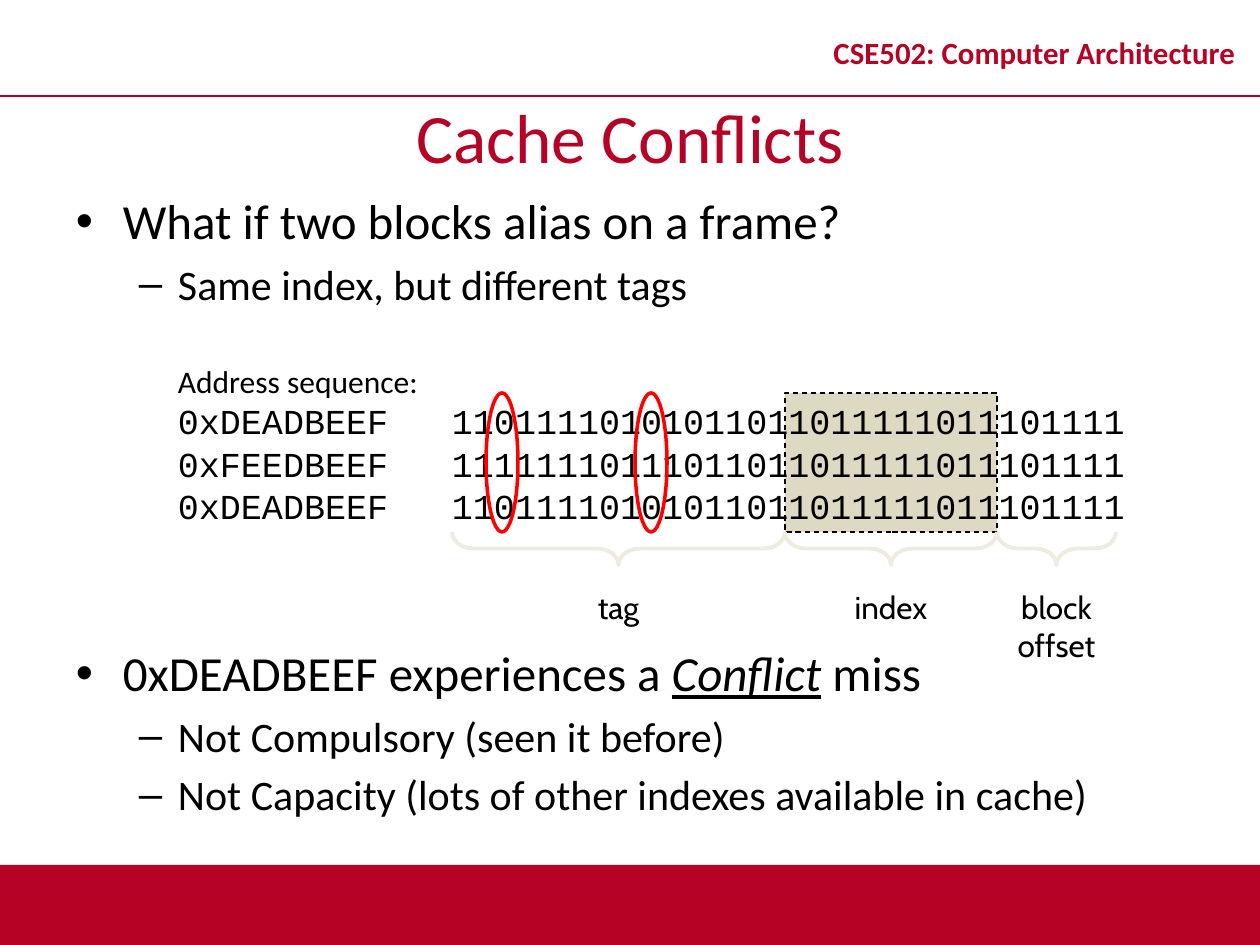
from lxml import etree
from pptx import Presentation
from pptx.dml.color import RGBColor
from pptx.enum import dml, shapes, text
from pptx.oxml.ns import qn
from pptx.util import Emu, Pt

PX = 914400 // 126
THEME = {
    "red": "B60225", "ink": "000000", "sand": "DDD9C3", "pale": "EEECE1",
    "ring": "FF0000", "sans": "Calibri", "mono": "Courier New", "tag": "Cabin",
    "title": 39.6, "main": 28, "sub": 24, "code": 20, "note": 18, "head": 17.6,
}
FORM = shapes.MSO_SHAPE
MID = text.MSO_ANCHOR.MIDDLE
LEFT, MIDDLE = text.PP_ALIGN.LEFT, text.PP_ALIGN.CENTER

deck = Presentation()
deck.slide_width, deck.slide_height = Emu(1260 * PX), Emu(945 * PX)
slide = deck.slides.add_slide(deck.slide_layouts[6])


def shape(form, box, fill=None, line=None, width=1):
    item = slide.shapes.add_shape(form, *[Emu(int(n * PX)) for n in box])
    item.shadow.inherit = False
    if fill:
        item.fill.solid()
        item.fill.fore_color.rgb = RGBColor.from_string(THEME[fill])
    else:
        item.fill.background()
    if line:
        item.line.color.rgb = RGBColor.from_string(THEME[line])
        item.line.width = Pt(width)
    else:
        item.line.fill.background()
    return item


def write(box, rows, size="sub", face="sans", color="ink", align=LEFT, anchor=None, **more):
    """Each row is a string, or (level, runs) for a bullet; a run is (words, format)."""
    frame = slide.shapes.add_textbox(*[Emu(int(n * PX)) for n in box]).text_frame
    frame.word_wrap = True
    frame.margin_left = frame.margin_right = frame.margin_top = frame.margin_bottom = 0
    if anchor:
        frame.vertical_anchor = anchor
    for i, row in enumerate(rows):
        para = frame.paragraphs[0] if i == 0 else frame.add_paragraph()
        para.alignment = align
        level, runs = (None, [(row, {})]) if isinstance(row, str) else row
        kind = size
        if level is not None:
            kind, mark, edge, hang = [("main", "•", 47, 47), ("sub", "–", 102, 39)][level]
            para.level = level
            prop = para._p.get_or_add_pPr()
            prop.set("marL", str(edge * PX))
            prop.set("indent", str(-hang * PX))
            if i:
                para.space_before = Pt(THEME[kind] * 0.2)
            etree.SubElement(prop, qn("a:buFont")).set("typeface", "Arial")
            etree.SubElement(prop, qn("a:buChar")).set("char", mark)
        if "space" in more:
            para.line_spacing = more["space"]
        for words, extra in runs:
            run = para.add_run()
            run.text = words
            look = {"size": Pt(THEME[kind]), "name": THEME[face],
                    "bold": more.get("bold", False), **extra}
            for key, value in look.items():
                setattr(run.font, key, value)
            run.font.color.rgb = RGBColor.from_string(THEME[color])


# Footer band, header rule and course name
shape(FORM.RECTANGLE, (0, 865, 1260, 80), "red")
rule = slide.shapes.add_connector(shapes.MSO_CONNECTOR.STRAIGHT, 0, 96 * PX, 1260 * PX, 96 * PX)
rule.line.color.rgb = RGBColor.from_string(THEME["red"])
rule.line.width = Pt(1)
etree.SubElement(rule._element.spPr, qn("a:effectLst"))
write((809, 16, 451, 79), ["CSE502: Computer Architecture"], "head", color="red",
      align=MIDDLE, anchor=MID, bold=True, space=0.8)

# Title
write((0, 96, 1260, 79), ["Cache Conflicts"], "title", color="red", align=MIDDLE, anchor=MID)

# Shaded index bits, behind the addresses
top, tall = 393, 139
shade = shape(FORM.RECTANGLE, (785, top, 212, tall), "sand", "ink", 0.75)
shade.line.dash_style = dml.MSO_LINE.DASH

# Bullets above and below the addresses
write((76, 191, 1108, 125), [
    (0, [("What if two blocks alias on a frame?", {})]),
    (1, [("Same index, but different tags", {})]),
])
write((76, 643, 1108, 190), [
    (0, [("0xDEADBEEF experiences a ", {}),
         ("Conflict", {"italic": True, "underline": True}), (" miss", {})]),
    (1, [("Not Compulsory (seen it before)", {})]),
    (1, [("Not Capacity (lots of other indexes available in cache)", {})]),
])

# Address sequence: hex column and bit column
dead = ("0xDEADBEEF", "11011110101011011011111011101111")
feed = ("0xFEEDBEEF", "11111110111011011011111011101111")
write((178, 362, 300, 38), ["Address sequence:"], "note")
for left, wide, col in zip((178, 452), (250, 720), zip(dead, feed, dead)):
    write((left, 400, wide, 126), col, "code", "mono", space=Pt(24))

# Braces and labels for the three address fields
deep = 33
edges = (452, 785, 997, 1116)
for start, end, name in zip(edges, edges[1:], ("tag", "index", "block offset")):
    mid, span = (start + end) / 2, end - start
    brace = shape(FORM.LEFT_BRACE,
                  (mid - deep / 2, top + tall + deep / 2 - span / 2, deep, span),
                  line="pale", width=2.25)
    brace.rotation = 270
    brace.adjustments[0] = 0.646
    write((mid - 43, 588, 86, 77), [name], "note", "tag", align=MIDDLE)

# Rings around the tag bits that differ
for left in (486, 635):
    shape(FORM.OVAL, (left, top, 32, tall), line="ring", width=2)

deck.save("out.pptx")
